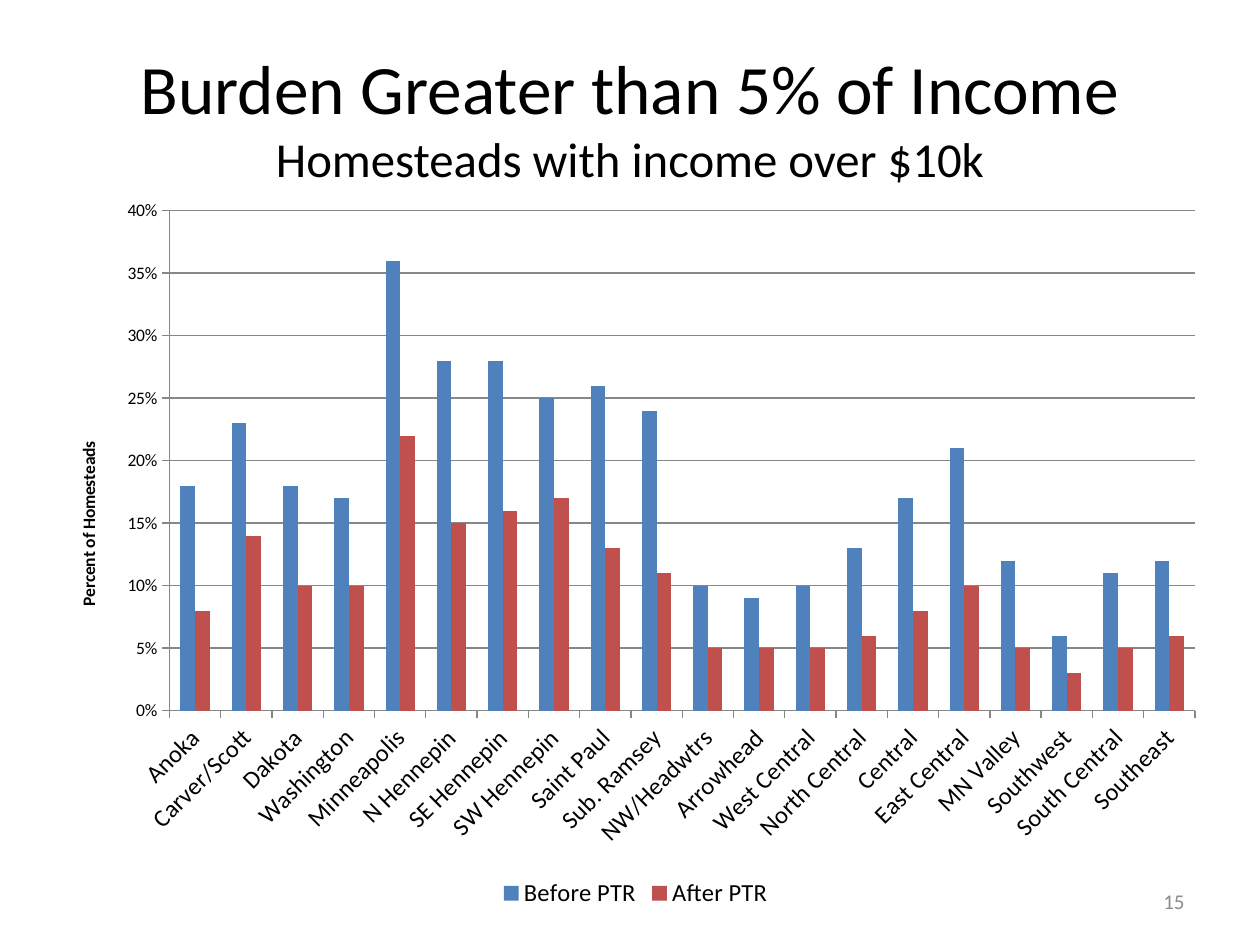
from lxml.etree import SubElement
from pptx import Presentation
from pptx.chart.data import CategoryChartData
from pptx.dml.color import RGBColor
from pptx.enum.chart import XL_CHART_TYPE, XL_LEGEND_POSITION, XL_TICK_MARK
from pptx.enum.text import MSO_ANCHOR, PP_ALIGN
from pptx.oxml.ns import qn
from pptx.util import Pt

PX = 9144  # 100 px to the inch
FONT = "Calibri"
BLACK, GRAY, LINE = "000000", "8C8C8C", "878787"

REGIONS = [
    "Anoka", "Carver/Scott", "Dakota", "Washington", "Minneapolis",
    "N Hennepin", "SE Hennepin", "SW Hennepin", "Saint Paul", "Sub. Ramsey",
    "NW/Headwtrs", "Arrowhead", "West Central", "North Central", "Central",
    "East Central", "MN Valley", "Southwest", "South Central", "Southeast",
]
# name: (colour, share of homesteads in each region)
SERIES = {
    "Before PTR": ("4F81BD", [
        0.18, 0.23, 0.18, 0.17, 0.36, 0.28, 0.28, 0.25, 0.26, 0.24,
        0.10, 0.09, 0.10, 0.13, 0.17, 0.21, 0.12, 0.06, 0.11, 0.12]),
    "After PTR": ("C0504D", [
        0.08, 0.14, 0.10, 0.10, 0.22, 0.15, 0.16, 0.17, 0.13, 0.11,
        0.05, 0.05, 0.05, 0.06, 0.08, 0.10, 0.05, 0.03, 0.05, 0.06]),
}
PLOT_AREA = {"x": 0.1, "y": 0.03, "w": 0.88, "h": 0.69}


def px(*lengths):
    return [length * PX for length in lengths]


def color(hex_value):
    return RGBColor.from_string(hex_value)


def set_all(target, values):
    for name, value in values.items():
        setattr(target, name, value)


def style_font(font, size, hex_value=BLACK, bold=False):
    set_all(font, {"name": FONT, "size": Pt(size), "bold": bold})
    font.color.rgb = color(hex_value)


def style_line(line, hex_value=LINE):
    line.color.rgb = color(hex_value)
    line.width = Pt(0.75)


def place(shape, left, top, width, height):
    values = px(left, top, width, height)
    set_all(shape, dict(zip(("left", "top", "width", "height"), values)))


def add_title(slide, lines):
    title = slide.shapes.title
    place(title, 50, 30, 900, 125)
    set_all(title.text_frame, {"vertical_anchor": MSO_ANCHOR.MIDDLE, "word_wrap": True})
    para = title.text_frame.paragraphs[0]
    para.alignment = PP_ALIGN.CENTER
    for index, (text, size) in enumerate(lines):
        if index:
            para.add_line_break()
        span = para.add_run()
        span.text = text
        style_font(span.font, size)


def add_page_number(slide, text):
    box = slide.shapes.add_textbox(*px(717, 695, 233, 40))
    set_all(box.text_frame, {"vertical_anchor": MSO_ANCHOR.MIDDLE, "word_wrap": True})
    para = box.text_frame.paragraphs[0]
    para.alignment = PP_ALIGN.RIGHT
    span = para.add_run()
    span.text = text
    style_font(span.font, 12, GRAY)


def fix_plot_area(chart, area):
    plot_area = chart.plots[0]._element.getparent()
    layout = plot_area.find(qn("c:layout"))
    if layout is None:
        layout = SubElement(plot_area, qn("c:layout"))
        plot_area.insert(0, layout)
    manual = SubElement(layout, qn("c:manualLayout"))
    settings = {"layoutTarget": "inner", "xMode": "edge", "yMode": "edge", **area}
    for name, value in settings.items():
        SubElement(manual, qn(f"c:{name}")).set("val", str(value))


def style_axis(axis, size):
    style_font(axis.tick_labels.font, size)
    style_line(axis.format.line)
    axis.major_tick_mark = XL_TICK_MARK.OUTSIDE


def style_axes(chart):
    regions, shares = chart.category_axis, chart.value_axis
    style_axis(regions, 14)
    style_axis(shares, 10)

    # Slanted region names
    body = regions._element.find(qn("c:txPr")).find(qn("a:bodyPr"))
    body.set("rot", "-2700000")
    body.set("vert", "horz")

    # Percent scale
    set_all(shares, {"minimum_scale": 0, "maximum_scale": 0.4,
                     "major_unit": 0.05, "has_major_gridlines": True})
    set_all(shares.tick_labels, {"number_format": "0%", "number_format_is_linked": False})
    style_line(shares.major_gridlines.format.line)
    para = shares.axis_title.text_frame.paragraphs[0]
    span = para.add_run()
    span.text = "Percent of Homesteads"
    style_font(span.font, 10, bold=True)


def add_column_chart(slide):
    data = CategoryChartData(number_format="0%")
    data.categories = REGIONS
    for name, (_, values) in SERIES.items():
        data.add_series(name, values)
    frame = slide.shapes.add_chart(
        XL_CHART_TYPE.COLUMN_CLUSTERED, *px(42, 150, 925, 575), data)
    chart = frame.chart
    set_all(chart, {"has_title": False, "has_legend": True})
    style_font(chart.font, 10)
    set_all(chart.legend, {"position": XL_LEGEND_POSITION.BOTTOM, "include_in_layout": False})
    style_font(chart.legend.font, 14)

    plot = chart.plots[0]
    set_all(plot, {"gap_width": 150, "overlap": 0, "vary_by_categories": False})
    for series in plot.series:
        series.format.fill.solid()
        series.format.fill.fore_color.rgb = color(SERIES[series.name][0])
    style_axes(chart)
    fix_plot_area(chart, PLOT_AREA)


def main():
    deck = Presentation()
    set_all(deck, dict(zip(("slide_width", "slide_height"), px(1000, 750))))
    slide = deck.slides.add_slide(deck.slide_layouts[5])
    add_title(slide, [("Burden Greater than 5% of Income", 39.6),
                      ("Homesteads with income over $10k", 27.9)])
    add_column_chart(slide)
    add_page_number(slide, "15")
    deck.save("out.pptx")


if __name__ == "__main__":
    main()
